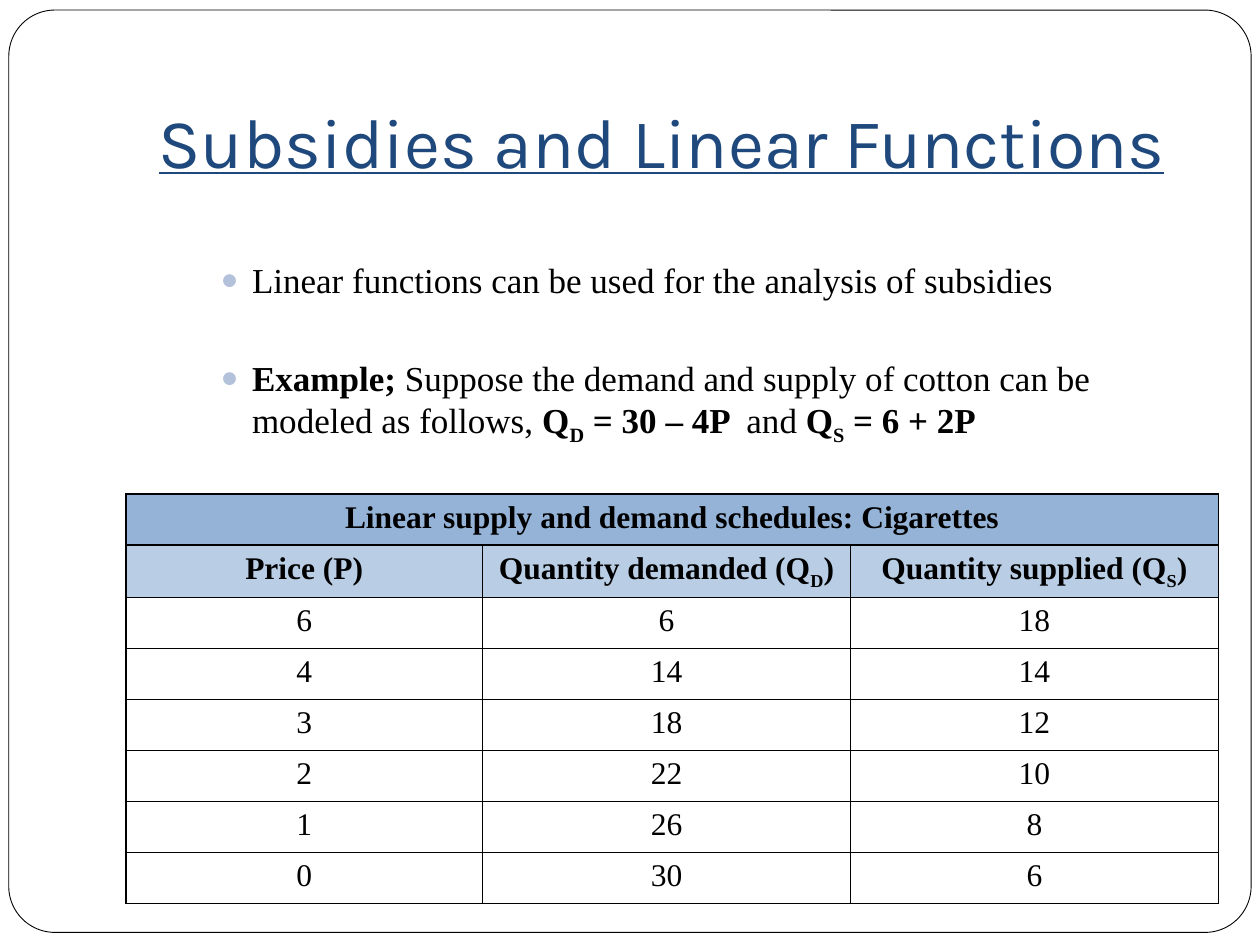
from lxml.etree import SubElement as Sub
from pptx import Presentation
from pptx.dml.color import RGBColor as RGB
from pptx.enum.shapes import MSO_SHAPE as Kind
from pptx.enum.text import MSO_ANCHOR as Anchor, MSO_AUTO_SIZE as Fit, PP_ALIGN as Align
from pptx.oxml import parse_xml
from pptx.oxml.ns import nsdecls, qn
from pptx.util import Inches, Pt

NAVY = RGB(0x1F, 0x49, 0x7D)
BLUE = RGB(0x95, 0xB3, 0xD7)
PALE = RGB(0xB9, 0xCD, 0xE5)
DOT = RGB(0xB3, 0xC1, 0xDB)
BLACK = RGB(0, 0, 0)
WHITE = RGB(255, 255, 255)
SERIF = "Times New Roman"


def write(para, parts, size, name=SERIF, color=BLACK, **extra):
    """Add (text, style) runs; in a style, b is bold and s is subscript."""
    for text, style in parts:
        run = para.add_run()
        run.text = text
        look = dict(size=Pt(size), name=name, bold="b" in style, **extra)
        for key, value in look.items():
            setattr(run.font, key, value)
        run.font.color.rgb = color
        if "s" in style:
            run.font._element.set("baseline", "-25000")


def place(shape, left, top, width, height):
    box = dict(left=left, top=top, width=width, height=height)
    for key, value in box.items():
        setattr(shape, key, Inches(value))


prs = Presentation()
prs.slide_width, prs.slide_height = Inches(10), Inches(7.5)
slide = prs.slides.add_slide(prs.slide_layouts[1])
shapes = slide.shapes
title, body = slide.placeholders

# Rounded frame, behind everything else
frame = shapes.add_shape(Kind.ROUNDED_RECTANGLE, 0, 0, 0, 0)
place(frame, 0.07, 0.08, 9.86, 7.32)
frame.adjustments[0] = 0.05
frame.shadow.inherit = False
frame.fill.solid()
frame.fill.fore_color.rgb = WHITE
frame.line.color.rgb = BLACK
frame.line.width = Pt(0.5)
title._element.addprevious(frame._element)

# Title
place(title, 1, 0.3, 8.5, 1.25)
look = dict(vertical_anchor=Anchor.BOTTOM, margin_bottom=Inches(0.1),
            word_wrap=True, auto_size=Fit.NONE)
for key, value in look.items():
    setattr(title.text_frame, key, value)
head = title.text_frame.paragraphs[0]
head.alignment = Align.CENTER
write(head, [("Subsidies and Linear Functions", "")], 40, "Karla", NAVY, underline=True)

# Bullets
POINTS = [
    [("Linear functions can be used for the analysis of subsidies", "")],
    [("Example; ", "b"),
     ("Suppose the demand and supply of cotton can be modeled as follows, ", ""),
     ("Q", "b"), ("D", "bs"), (" = 30 – 4P  ", "b"), ("and ", ""),
     ("Q", "b"), ("S", "bs"), (" = 6 + 2P", "b")],
]
place(body, 1, 1.58, 8.5, 5)
text = body.text_frame
text.auto_size = Fit.NONE
text.margin_top = Inches(0.47)
for i, parts in enumerate(POINTS):
    para = text.add_paragraph() if i else text.paragraphs[0]
    para.level = 2
    para.space_before = Pt(32 * i)
    write(para, parts, 20)
    props = para._p.get_or_add_pPr()
    props.set("marL", str(Inches(0.9)))
    props.set("indent", str(Inches(-0.25)))
    Sub(Sub(props, qn("a:buClr")), qn("a:srgbClr")).set("val", str(DOT))
    Sub(props, qn("a:buSzPct")).set("val", "85000")
    Sub(props, qn("a:buChar")).set("char", "●")

# Table
ROWS = [
    [[("Linear supply and demand schedules: Cigarettes", "b")], [], []],
    [[("Price (P)", "b")]] + [
        [(f"Quantity {word} (Q", "b"), (sub, "bs"), (")", "b")]
        for word, sub in (("demanded", "D"), ("supplied", "S"))],
]
for price in (6, 4, 3, 2, 1, 0):
    ROWS.append([[(str(n), "")] for n in (price, 30 - 4 * price, 6 + 2 * price)])
FILLS = [BLUE, PALE]

grid = shapes.add_table(len(ROWS), 3, Inches(1), Inches(3.92),
                        Inches(8.67), Inches(3.24)).table
for col, width in zip(grid.columns, (2.83, 2.92, 2.92)):
    col.width = Inches(width)
for r, row in enumerate(ROWS):
    for c, parts in enumerate(row):
        cell = grid.cell(r, c)
        para = cell.text_frame.paragraphs[0]
        para.alignment = Align.CENTER
        write(para, parts, 18)
        if r < len(FILLS):
            cell.fill.solid()
            cell.fill.fore_color.rgb = FILLS[r]
        else:
            cell.fill.background()
        props = cell._tc.get_or_add_tcPr()
        for i, side in enumerate("LRTB"):
            props.insert(i, parse_xml(
                f'<a:ln{side} {nsdecls("a")} w="{Pt(1)}"><a:solidFill>'
                f'<a:srgbClr val="{BLACK}"/></a:solidFill></a:ln{side}>'))
grid.cell(0, 0).merge(grid.cell(0, 2))

prs.save("out.pptx")
